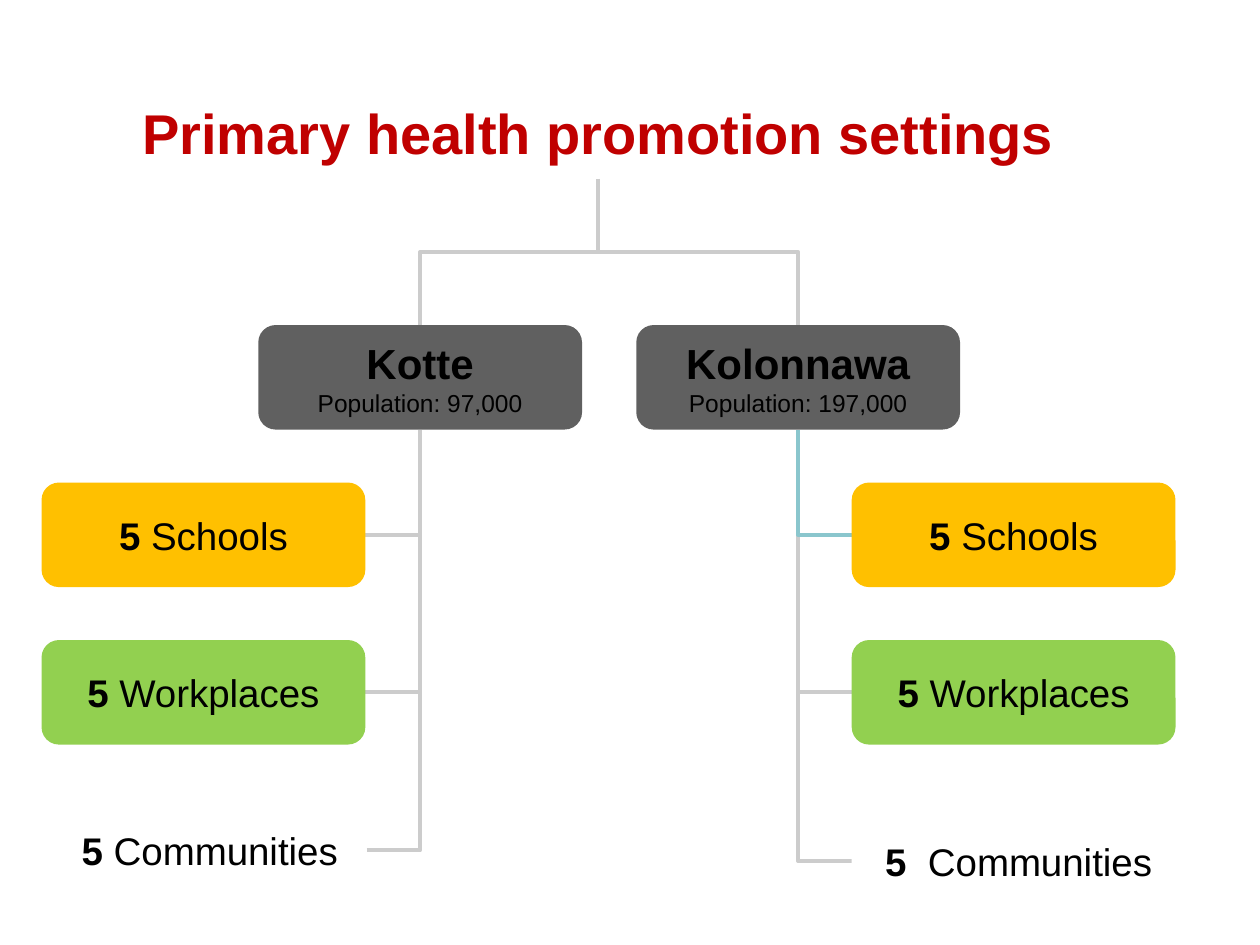
from lxml.etree import SubElement
from pptx import Presentation
from pptx.dml.color import RGBColor
from pptx.enum.shapes import MSO_CONNECTOR, MSO_SHAPE
from pptx.enum.text import MSO_ANCHOR, MSO_AUTO_SIZE, PP_ALIGN
from pptx.oxml.ns import qn
from pptx.util import Inches, Pt

COLORS = {
    "title": "C00000", "text": "000000", "head": "606060",
    "school": "FFC000", "work": "92D050", "town": "FFFFFF",
    "line": "CCCCCC", "teal": "8AC6CD",
}
WIDE, HIGH = 2.57, 0.83
ROOT = (4.75, 1.42)
HEAD_TOP = 2.58
ROW_TOP, ROW_STEP = 3.83, 1.25


def rgb(name):
    return RGBColor.from_string(COLORS[name])


def add_text(para, text, size=22, bold=False, color="text"):
    run = para.add_run()
    run.text = text
    font = run.font
    font.name, font.size, font.bold = "Arial", Pt(size), bold
    font.color.rgb = rgb(color)


def set_frame(frame):
    """Centre the text in its box, without margins or wrapping."""
    frame.margin_left = frame.margin_right = 0
    frame.margin_top = frame.margin_bottom = 0
    frame.word_wrap = False
    frame.auto_size = MSO_AUTO_SIZE.NONE
    frame.vertical_anchor = MSO_ANCHOR.MIDDLE


def add_box(slide, box, fill, lines):
    """Add a rounded box; each line is a list of (text, size, bold)."""
    shape = slide.shapes.add_shape(
        MSO_SHAPE.ROUNDED_RECTANGLE, *map(Inches, box))
    shape.shadow.inherit = False
    shape.fill.solid()
    shape.fill.fore_color.rgb = rgb(fill)
    shape.line.fill.background()
    frame = shape.text_frame
    set_frame(frame)
    for i, line in enumerate(lines):
        para = frame.add_paragraph() if i else frame.paragraphs[0]
        para.alignment = PP_ALIGN.CENTER
        for text, size, bold in line:
            add_text(para, text, size=size, bold=bold)


def add_link(slide, start, end, color="line"):
    link = slide.shapes.add_connector(
        MSO_CONNECTOR.ELBOW, *map(Inches, start + end))
    link.line.color.rgb = rgb(color)
    link.line.width = Pt(2.25)
    props = link.element.spPr
    SubElement(props, qn("a:effectLst"))
    return props


def add_leg(slide, start, end, color):
    """Link with one corner: across first, then up."""
    props = add_link(slide, start, end, color)
    props.find(qn("a:prstGeom")).set("prst", "bentConnector2")


def add_drop(slide, start, end):
    """Link that goes down, across and down: an elbow turned by 90 degrees."""
    (x0, y0), (x1, y1) = start, end
    mid_x, mid_y = (x0 + x1) / 2, (y0 + y1) / 2
    half_x, half_y = (x1 - x0) / 2, (y1 - y0) / 2
    props = add_link(slide, (mid_x - half_y, mid_y + half_x),
                     (mid_x + half_y, mid_y - half_x))
    props.find(qn("a:xfrm")).set("rot", "5400000")


def add_title(slide, box, text):
    title = slide.shapes.title
    title.left, title.top, title.width, title.height = map(Inches, box)
    set_frame(title.text_frame)
    para = title.text_frame.paragraphs[0]
    para.alignment = PP_ALIGN.CENTER
    add_text(para, text, size=32, bold=True, color="title")


def add_branch(slide, left, name, people, items, side):
    """Add a town's head box and its items, on side -1 (left) or 1 (right)."""
    stem = left + WIDE / 2
    add_drop(slide, ROOT, (stem, HEAD_TOP))
    for _, box, _, _, color in reversed(items):
        x, y, w, h = box
        edge = x if side > 0 else x + w
        add_leg(slide, (edge, y + h / 2), (stem, HEAD_TOP + HIGH), color)
    add_box(slide, (left, HEAD_TOP, WIDE, HIGH), "head",
            [[(name, 24, True)], [(f"Population: {people}", 14, False)]])
    for fill, box, count, label, _ in items:
        add_box(slide, box, fill, [[(count, 22, True), (label, 22, False)]])


def get_items(left, town, gap, first):
    """List the three settings of a branch as fill, box, count, label, line."""
    rows = [(left, ROW_TOP + i * ROW_STEP, WIDE, HIGH) for i in range(2)]
    return [
        ("school", rows[0], "5 ", "Schools", first),
        ("work", rows[1], "5 ", "Workplaces", "line"),
        ("town", town, "5" + gap, "Communities", "line"),
    ]


def main():
    deck = Presentation()
    deck.slide_width, deck.slide_height = Inches(10), Inches(7.5)
    slide = deck.slides.add_slide(deck.slide_layouts[5])
    add_title(slide, (0.75, 0.67, 8, 0.75),
              "Primary health promotion settings")
    add_branch(slide, 2.05, "Kotte", "97,000", get_items(
        0.33, (0.42, 6.25, 2.49, 1), " ", "line"), -1)
    add_branch(slide, 5.05, "Kolonnawa", "197,000", get_items(
        6.76, (6.76, 6.42, 2.65, HIGH), "  ", "teal"), 1)
    deck.save("out.pptx")


if __name__ == "__main__":
    main()
